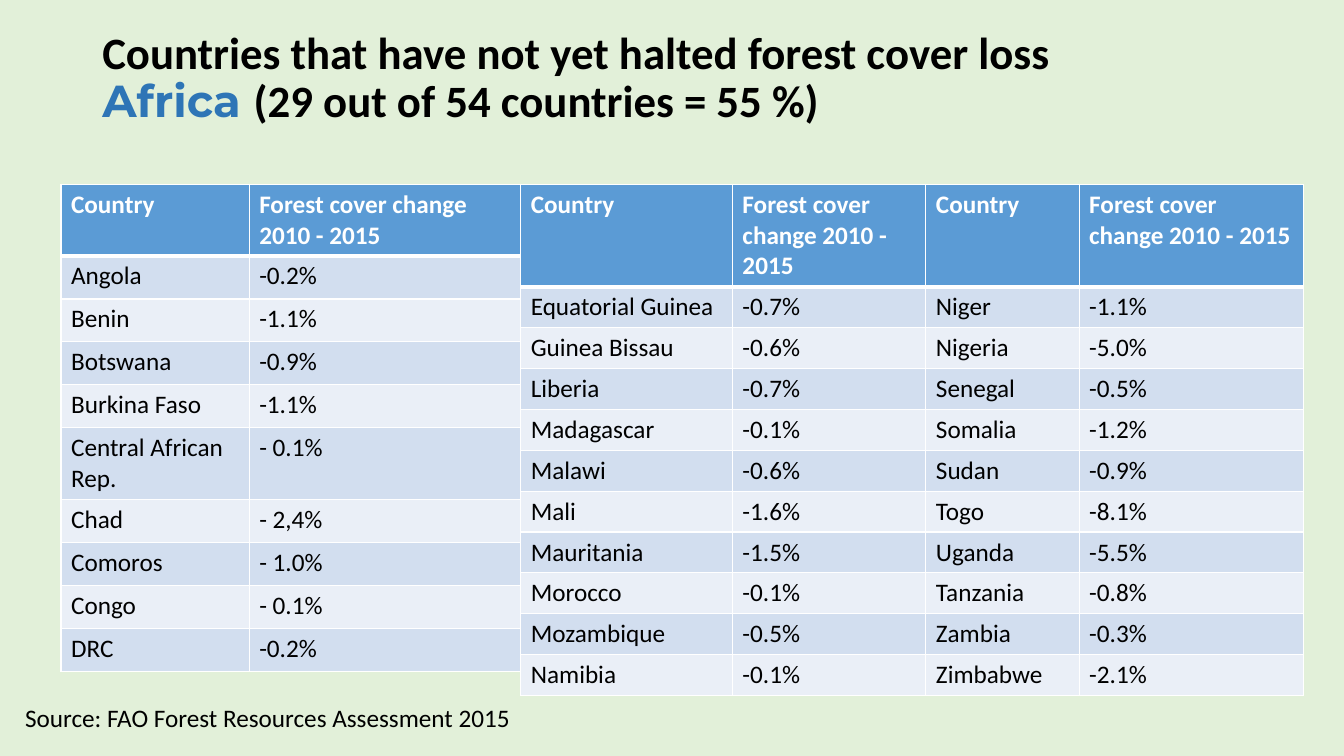
from dataclasses import dataclass

import pptx
import pptx.dml.color
import pptx.enum.text
import pptx.oxml
import pptx.oxml.ns
import pptx.util

Pt = pptx.util.Pt
RGB = pptx.dml.color.RGBColor.from_string


@dataclass(frozen=True)
class Theme:
    background: str = "E2F0D9"
    text: str = "000000"
    accent: str = "2E75B6"
    header: str = "5B9BD5"
    bands: tuple = ("D2DEEF", "EAEFF7")
    white: str = "FFFFFF"
    font: str = "Calibri"
    accent_font: str = "Montserrat"
    title_size: int = 32
    body_size: int = 18
    thin: int = 1
    thick: int = 3


THEME = Theme()

FIRST_ROWS = [
    ("Country", "Forest cover change\n2010 - 2015"),
    ("Angola", "-0.2%"),
    ("Benin", "-1.1%"),
    ("Botswana", "-0.9%"),
    ("Burkina Faso", "-1.1%"),
    ("Central African Rep.", "- 0.1%"),
    ("Chad", "- 2,4%"),
    ("Comoros", "- 1.0%"),
    ("Congo", "- 0.1%"),
    ("DRC", "-0.2%"),
]
SECOND_ROWS = [
    ("Country", "Forest cover change 2010 - 2015") * 2,
    ("Equatorial Guinea", "-0.7%", "Niger", "-1.1%"),
    ("Guinea Bissau", "-0.6%", "Nigeria", "-5.0%"),
    ("Liberia", "-0.7%", "Senegal", "-0.5%"),
    ("Madagascar", "-0.1%", "Somalia", "-1.2%"),
    ("Malawi", "-0.6%", "Sudan", "-0.9%"),
    ("Mali", "-1.6%", "Togo", "-8.1%"),
    ("Mauritania", "-1.5%", "Uganda", "-5.5%"),
    ("Morocco", "-0.1%", "Tanzania", "-0.8%"),
    ("Mozambique", "-0.5%", "Zambia", "-0.3%"),
    ("Namibia", "-0.1%", "Zimbabwe", "-2.1%"),
]


def style_font(font, size, color, bold=False, name=THEME.font):
    font.name = name
    font.size = Pt(size)
    font.bold = bold
    font.color.rgb = RGB(color)


def add_text_box(s, left, top, width, height):
    tf = s.shapes.add_textbox(Pt(left), Pt(top), Pt(width), Pt(height)).text_frame
    tf.word_wrap = True
    return tf


def add_title(s):
    tf = add_text_box(s, 66, 28.8, 828, 55.4)
    tf.vertical_anchor = pptx.enum.text.MSO_ANCHOR.MIDDLE
    p = tf.paragraphs[0]
    p.line_spacing = 0.9

    def add_run(text, color=THEME.text, name=THEME.font):
        r = p.add_run()
        r.text = text
        style_font(r.font, THEME.title_size, color, True, name)

    add_run("Countries that have not yet halted forest cover loss")
    p.add_line_break()
    add_run("Africa ", THEME.accent, THEME.accent_font)
    add_run("(29 out of 54 countries = 55 %)")


def add_source(s):
    p = add_text_box(s, 10.8, 498.2, 394.6, 29).paragraphs[0]
    p.text = "Source: FAO Forest Resources Assessment 2015"
    style_font(p.font, THEME.body_size, THEME.text)


def set_borders(cell, **widths):
    tc_pr = cell._tc.get_or_add_tcPr()
    for side in "LRTB":
        width = Pt(widths.get(side, THEME.thin))
        tc_pr.append(pptx.oxml.parse_xml(
            f'<a:ln{side} {pptx.oxml.ns.nsdecls("a")} w="{width}"><a:solidFill>'
            f'<a:srgbClr val="{THEME.white}"/></a:solidFill></a:ln{side}>'))


def style_cell(cell, text, row):
    header = row == 0
    set_borders(cell, **{0: {"B": THEME.thick}, 1: {"T": THEME.thick}}.get(row, {}))
    cell.fill.solid()
    cell.fill.fore_color.rgb = RGB(THEME.header if header else THEME.bands[(row - 1) % 2])
    cell.text = text
    for p in cell.text_frame.paragraphs:
        style_font(p.font, THEME.body_size, THEME.white if header else THEME.text, header)


def add_country_table(s, left, top, widths, heights, rows):
    table = s.shapes.add_table(len(rows), len(widths), Pt(left), Pt(top),
                               Pt(sum(widths)), Pt(sum(heights))).table
    table.horz_banding = False
    for column, width in zip(table.columns, widths):
        column.width = Pt(width)
    for i, (row, height, texts) in enumerate(zip(table.rows, heights, rows)):
        row.height = Pt(height)
        for cell, text in zip(row.cells, texts):
            style_cell(cell, text, i)


def main():
    prs = pptx.Presentation()
    prs.slide_width, prs.slide_height = Pt(960), Pt(540)
    s = prs.slides.add_slide(prs.slide_layouts[6])
    s.background.fill.solid()
    s.background.fill.fore_color.rgb = RGB(THEME.background)

    add_title(s)
    first_heights = [51.2 if i in (0, 5) else 30.7 for i in range(len(FIRST_ROWS))]
    second_heights = [73.2] + [29.2] * (len(SECOND_ROWS) - 1)
    add_country_table(s, 43.6, 131.6, [134.4, 194], first_heights, FIRST_ROWS)
    add_country_table(s, 372, 131.6, [151.2, 138.2, 109.5, 160.5], second_heights, SECOND_ROWS)
    add_source(s)
    prs.save("out.pptx")


if __name__ == "__main__":
    main()
